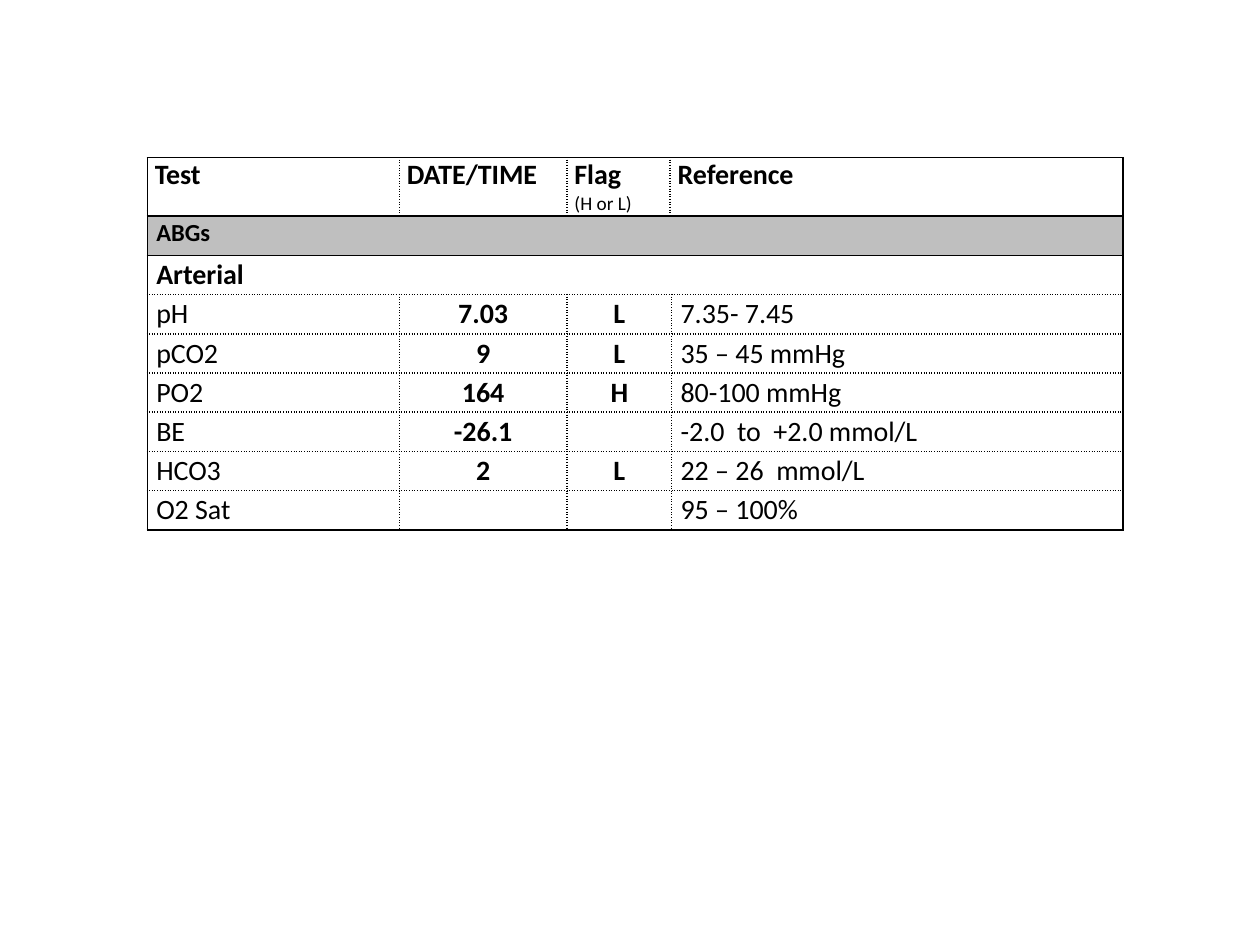
from dataclasses import dataclass

from lxml.etree import SubElement
from pptx import Presentation
from pptx.dml.color import RGBColor
from pptx.enum.text import MSO_ANCHOR, PP_ALIGN
from pptx.oxml.ns import qn
from pptx.util import Cm, Pt

# Content
HEADER = [["Test"], ["DATE/TIME"], ["Flag", "(H or L)"], ["Reference"]]
SECTION = "ABGs"
SUBSECTION = "Arterial"
RESULTS = [
    ("pH", "7.03", "L", "7.35- 7.45"),
    ("pCO2", "9", "L", "35 – 45 mmHg"),
    ("PO2", "164", "H", "80-100 mmHg"),
    ("BE", "-26.1", "", "-2.0  to  +2.0 mmol/L"),
    ("HCO3", "2", "L", "22 – 26  mmol/L"),
    ("O2 Sat", "", "", "95 – 100%"),
]
CENTRED = (1, 2)  # value and flag columns


@dataclass(frozen=True)
class Theme:
    font: str = "Calibri"
    ink: str = "000000"
    paper: str = "FFFFFF"
    band: str = "BFBFBF"
    body: int = 16
    section: int = 14
    note: int = 11
    line: int = 1


THEME = Theme()

# Layout in cm
LEFT, HEADER_TOP, RESULTS_TOP = 2.97, 3.18, 4.24
HEADER_COLS, HEADER_ROWS = (5.08, 3.38, 2.08, 9.13), (1.14,)
RESULTS_COLS = (5.08, 3.38, 2.11, 9.1)
RESULTS_ROWS = (0.91,) + (0.79,) * (len(RESULTS) + 1)


def add_grid(s, top, cols, rows):
    shape = s.shapes.add_table(len(rows), len(cols), Cm(LEFT), Cm(top),
                               Cm(sum(cols)), Cm(sum(rows)))
    tbl = shape.table
    tbl.first_row = tbl.horz_banding = False
    for col, width in zip(tbl.columns, cols):
        col.width = Cm(width)
    for row, height in zip(tbl.rows, rows):
        row.height = Cm(height)
    return tbl


def style_cell(cell, solid, margin, anchor, fill=None):
    """Draw solid lines on the named sides, dotted lines on the others."""
    tc_pr = cell._tc.get_or_add_tcPr()
    for side in "LRTB":
        ln = SubElement(tc_pr, qn(f"a:ln{side}"), w=str(Pt(THEME.line)))
        color = SubElement(ln, qn("a:solidFill"))
        SubElement(color, qn("a:srgbClr"), val=THEME.ink)
        SubElement(ln, qn("a:prstDash"),
                   val="solid" if side in solid else "sysDot")
    if fill:
        cell.fill.solid()
        cell.fill.fore_color.rgb = RGBColor.from_string(fill)
    else:
        cell.fill.background()
    cell.margin_left = cell.margin_right = Cm(margin)
    cell.margin_top = cell.margin_bottom = 0
    cell.vertical_anchor = anchor


def add_text(p, text, size=THEME.body, bold=False):
    r = p.add_run()
    r.text = text
    r.font.name, r.font.size, r.font.bold = THEME.font, Pt(size), bold
    r.font.color.rgb = RGBColor.from_string(THEME.ink)


def outer_sides(i, count, first, last):
    return (first if i == 0 else "") + (last if i == count - 1 else "")


def add_results(s):
    tbl = add_grid(s, RESULTS_TOP, RESULTS_COLS, RESULTS_ROWS)
    n_rows, n_cols = len(RESULTS_ROWS), len(RESULTS_COLS)
    for i in range(n_rows):
        for j in range(n_cols):
            solid = outer_sides(i, n_rows, "TB", "B") + outer_sides(j, n_cols, "L", "R")
            solid += {0: "LR", 1: "TLR"}.get(i, "")
            style_cell(tbl.cell(i, j), solid, 0.18, MSO_ANCHOR.MIDDLE,
                       THEME.band if i == 0 else None)

    # Full-width title rows
    for i, (text, size) in enumerate([(SECTION, THEME.section),
                                      (SUBSECTION, THEME.body)]):
        tbl.cell(i, 0).merge(tbl.cell(i, n_cols - 1))
        add_text(tbl.cell(i, 0).text_frame.paragraphs[0], text, size, True)

    # Test results
    for i, result in enumerate(RESULTS, start=2):
        for j, text in enumerate(result):
            p = tbl.cell(i, j).text_frame.paragraphs[0]
            if j in CENTRED:
                p.alignment = PP_ALIGN.CENTER
            if text:
                add_text(p, text, bold=j in CENTRED)


def add_header(s):
    tbl = add_grid(s, HEADER_TOP, HEADER_COLS, HEADER_ROWS)
    for j, (title, *notes) in enumerate(HEADER):
        cell = tbl.cell(0, j)
        style_cell(cell, "TB" + outer_sides(j, len(HEADER), "L", "R"),
                   0.15, MSO_ANCHOR.TOP, THEME.paper)
        tf = cell.text_frame
        add_text(tf.paragraphs[0], title, bold=True)
        for note in notes:
            add_text(tf.add_paragraph(), note, THEME.note)


def main():
    prs = Presentation()
    prs.slide_width, prs.slide_height = Cm(25.4), Cm(19.05)
    s = prs.slides.add_slide(prs.slide_layouts[6])
    add_results(s)
    add_header(s)  # overlaps the top edge of the results
    prs.save("out.pptx")


if __name__ == "__main__":
    main()
